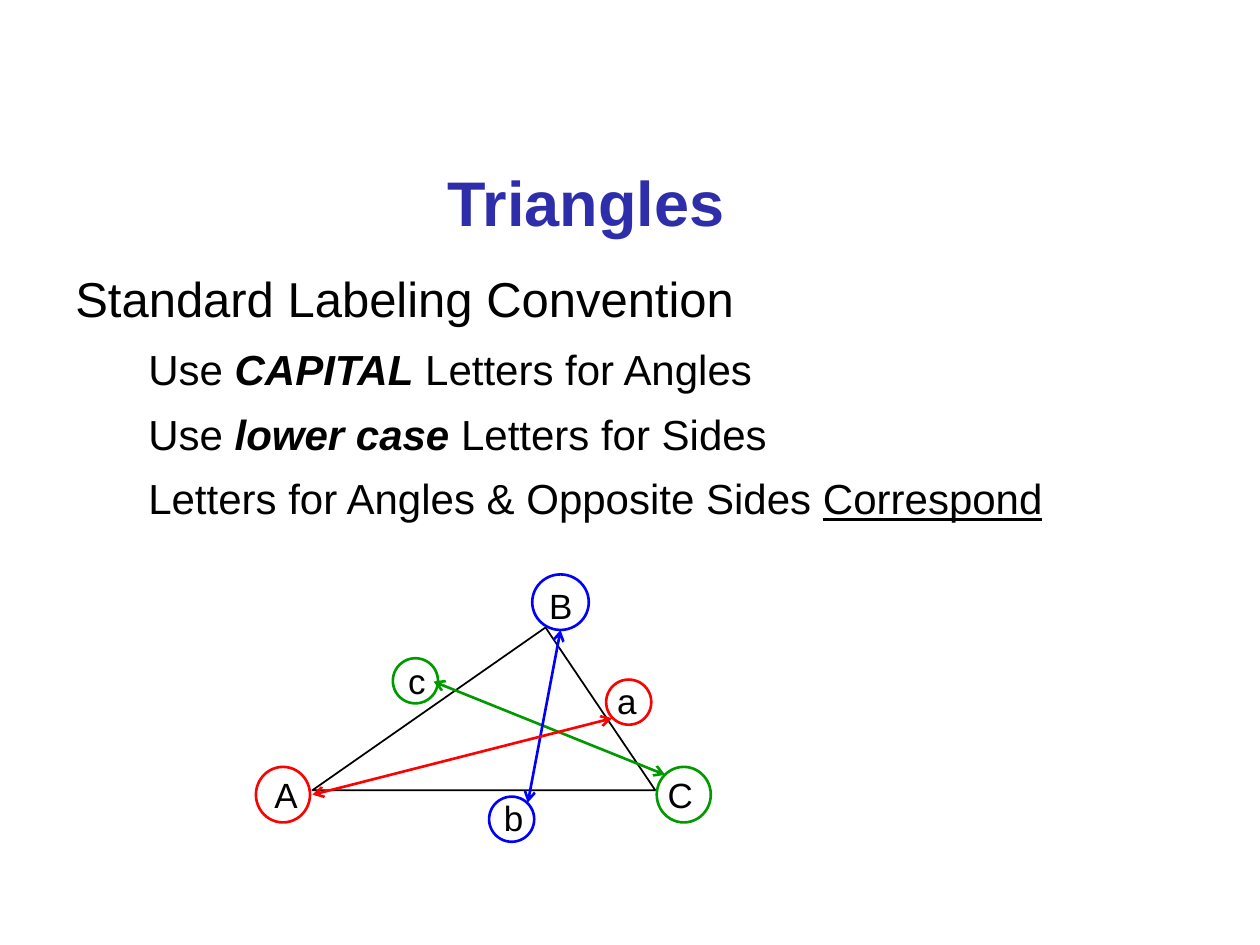
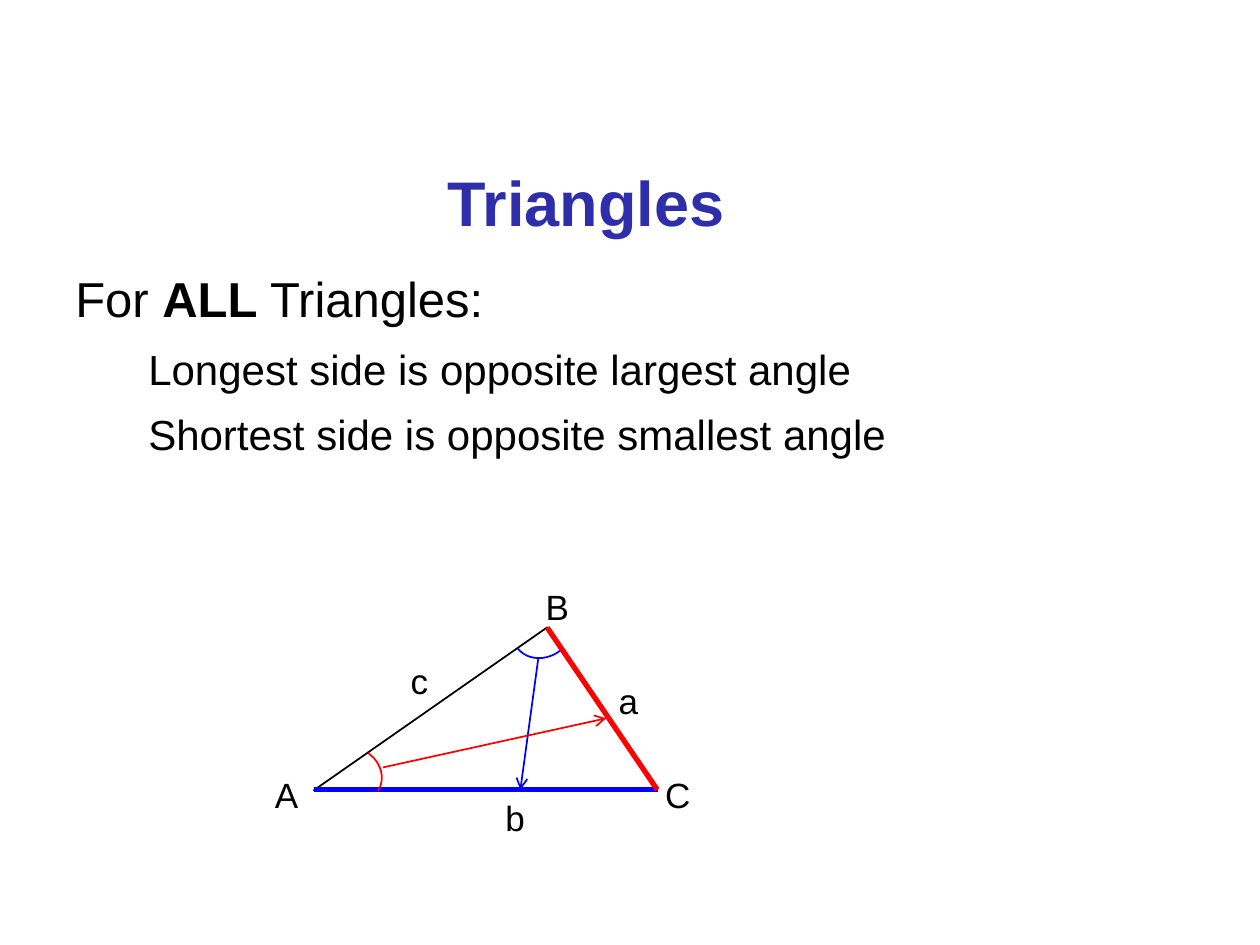
import pptx
import pptx.util
from dataclasses import dataclass
from lxml import etree
from pptx.dml.color import RGBColor
from pptx.enum.shapes import MSO_CONNECTOR, MSO_SHAPE
from pptx.enum.text import MSO_ANCHOR, MSO_AUTO_SIZE, PP_ALIGN
from pptx.oxml.ns import qn

Cm = pptx.util.Cm
Pt = pptx.util.Pt


@dataclass(frozen=True)
class Theme:
    font: str = "Arial"
    title: str = "2E2EAA"
    ink: str = "000000"
    red: str = "FF0000"
    green: str = "009900"
    blue: str = "0000FF"
    title_size: int = 36
    head_size: int = 28
    item_size: int = 24
    label_size: int = 20
    thin: float = 1
    ring: float = 1.5
    thick: float = 3


T = Theme()


@dataclass(frozen=True)
class Box:
    x: float
    y: float
    w: float
    h: float


@dataclass(frozen=True)
class Run:
    text: str
    style: str = ""  # any of b, i, u


@dataclass(frozen=True)
class Label:
    text: str
    x: float
    y: float


@dataclass(frozen=True)
class Line:
    x1: float
    y1: float
    x2: float
    y2: float


@dataclass(frozen=True)
class Match:
    """An angle ring and a side ring in one colour, joined by an arrow."""
    color: str
    angle: Box
    side: Box
    arrow: Line


@dataclass(frozen=True)
class Mark:
    """An angle arc, the arrow from it and the thick side it points at."""
    color: str
    arc: Box
    turn: float
    arrow: Line
    side: Line


# Text
def style(par, size: int, color: str) -> None:
    par.font.name = T.font
    par.font.size = Pt(size)
    par.font.color.rgb = RGBColor.from_string(color)


def write(shapes, box: Box, runs: list[Run], size: int) -> None:
    text = shapes.add_textbox(Cm(box.x), Cm(box.y), Cm(box.w), Cm(box.h))
    frame = text.text_frame
    frame.word_wrap = True
    frame.auto_size = MSO_AUTO_SIZE.SHAPE_TO_FIT_TEXT
    par = frame.paragraphs[0]
    style(par, size, T.ink)
    for part in runs:
        run = par.add_run()
        run.text = part.text
        if "b" in part.style:
            run.font.bold = True
        if "i" in part.style:
            run.font.italic = True
        if "u" in part.style:
            run.font.underline = True


def name(shapes, label: Label) -> None:
    width = 1.68 if label.text.isupper() else 1.12
    write(shapes, Box(label.x, label.y, width, 1.12), [Run(label.text)],
          T.label_size)


# Outlines and lines
def trace(shapes, kind, box: Box, color: str, width: float):
    shape = shapes.add_shape(kind, Cm(box.x), Cm(box.y), Cm(box.w), Cm(box.h))
    shape.shadow.inherit = False
    shape.fill.background()
    shape.line.color.rgb = RGBColor.from_string(color)
    shape.line.width = Pt(width)
    return shape


def join(shapes, line: Line, color: str, width: float,
         *ends: str) -> None:
    link = shapes.add_connector(MSO_CONNECTOR.STRAIGHT, Cm(line.x1),
                                Cm(line.y1), Cm(line.x2), Cm(line.y2))
    link.line.color.rgb = RGBColor.from_string(color)
    link.line.width = Pt(width)
    props = link.line._get_or_add_ln()
    for end in ends:
        etree.SubElement(props, qn(f"a:{end}"), type="arrow")
    etree.SubElement(link._element.spPr, qn("a:effectLst"))


def draw_tri(shapes, left: float) -> None:
    shape = trace(shapes, MSO_SHAPE.ISOSCELES_TRIANGLE,
                  Box(left, 12.65, 6.91, 3.28), T.ink, T.thin)
    shape.adjustments[0] = 0.68


def draw_match(slide, match: Match) -> None:
    shapes = slide.shapes.add_group_shape().shapes
    for box in (match.angle, match.side):
        trace(shapes, MSO_SHAPE.OVAL, box, match.color, T.ring)
    join(shapes, match.arrow, match.color, T.ring, "headEnd", "tailEnd")


def draw_mark(slide, mark: Mark) -> None:
    shapes = slide.shapes.add_group_shape().shapes
    join(shapes, mark.arrow, mark.color, T.thin, "tailEnd")
    join(shapes, mark.side, mark.color, T.thick)
    arc = trace(shapes, MSO_SHAPE.ARC, mark.arc, mark.color, T.thin)
    # A quarter turn: 162.36 stands for about 270 degrees
    arc.adjustments[0] = 162.36
    arc.adjustments[1] = 0
    arc.rotation = mark.turn


# Title, heading and indented lines shared by the slides
def start(deck, head: list[Run], items: list[list[Run]]):
    slide = deck.slides.add_slide(deck.slide_layouts[5])
    title = slide.shapes.title
    title.left, title.top = Cm(8.74), Cm(3.16)
    title.width, title.height = Cm(6.15), Cm(1.8)
    frame = title.text_frame
    frame.text = "Triangles"
    frame.word_wrap = False
    frame.auto_size = MSO_AUTO_SIZE.SHAPE_TO_FIT_TEXT
    frame.vertical_anchor = MSO_ANCHOR.TOP
    par = frame.paragraphs[0]
    par.alignment = PP_ALIGN.CENTER
    style(par, T.title_size, T.title)
    par.font.bold = True
    write(slide.shapes, Box(1.27, 5.28, 18.69, 1.45), head, T.head_size)
    for row, runs in enumerate(items):
        wide = 20.85 if row == 2 else 15.44
        write(slide.shapes, Box(2.74, 6.81 + 1.3 * row, wide, 1.27), runs,
              T.item_size)
    return slide


# Slide 1: labeling convention
NAMES = [
    Label("A", 5.28, 15.47), Label("B", 10.82, 11.66),
    Label("C", 13.21, 15.47), Label("a", 12.19, 13.57),
    Label("b", 9.91, 15.93), Label("c", 7.98, 13.17),
]
PAIRS = [
    Match(T.green, Box(13.24, 15.46, 1.09, 1.12), Box(7.92, 13.27, 0.91, 0.91),
          Line(13.41, 15.62, 8.74, 13.74)),
    Match(T.blue, Box(10.73, 11.58, 1.14, 1.12), Box(9.86, 16.06, 0.91, 0.91),
          Line(11.3, 12.7, 10.64, 16.18)),
    Match(T.red, Box(5.16, 15.46, 1.09, 1.12), Box(12.22, 13.7, 0.91, 0.91),
          Line(6.3, 16.02, 12.34, 14.48)),
]


def add_rules(deck) -> None:
    slide = start(deck, [Run("Standard Labeling Convention")], [
        [Run("Use "), Run("CAPITAL", "bi"), Run(" Letters for Angles")],
        [Run("Use "), Run("lower case ", "bi"), Run("Letters for Sides")],
        [Run("Letters for Angles & Opposite Sides "), Run("Correspond", "u")],
    ])
    draw_tri(slide.shapes, 6.3)
    for label in NAMES:
        name(slide.shapes, label)
    for match in PAIRS:
        draw_match(slide, match)


# Slide 2: sides and opposite angles
TAGS = [
    Label("A", 5.29, 15.47), Label("B", 10.75, 11.68),
    Label("C", 13.16, 15.47), Label("a", 12.22, 13.57),
    Label("b", 9.94, 15.93), Label("c", 8.03, 13.17),
]
MARKS = [
    Mark(T.blue, Box(10.29, 12.09, 1.32, 1.14), 140.7,
         Line(10.85, 13.28, 10.49, 15.92), Line(6.33, 15.92, 13.26, 15.92)),
    Mark(T.red, Box(6.53, 15.09, 1.19, 1.04), 34.3,
         Line(7.72, 15.47, 12.22, 14.48), Line(11.03, 12.65, 13.25, 15.92)),
]


def add_sides(deck) -> None:
    slide = start(deck, [Run("For "), Run("ALL", "b"), Run(" Triangles:")], [
        [Run("Longest side is opposite largest angle")],
        [Run("Shortest side is opposite smallest angle")],
    ])
    group = slide.shapes.add_group_shape().shapes
    draw_tri(group, 6.33)
    for tag in TAGS:
        name(group, tag)
    for mark in MARKS:
        draw_mark(slide, mark)


def main() -> None:
    deck = pptx.Presentation()
    deck.slide_width, deck.slide_height = Cm(25.4), Cm(19.05)
    add_rules(deck)
    add_sides(deck)
    deck.save("out.pptx")


if __name__ == "__main__":
    main()
